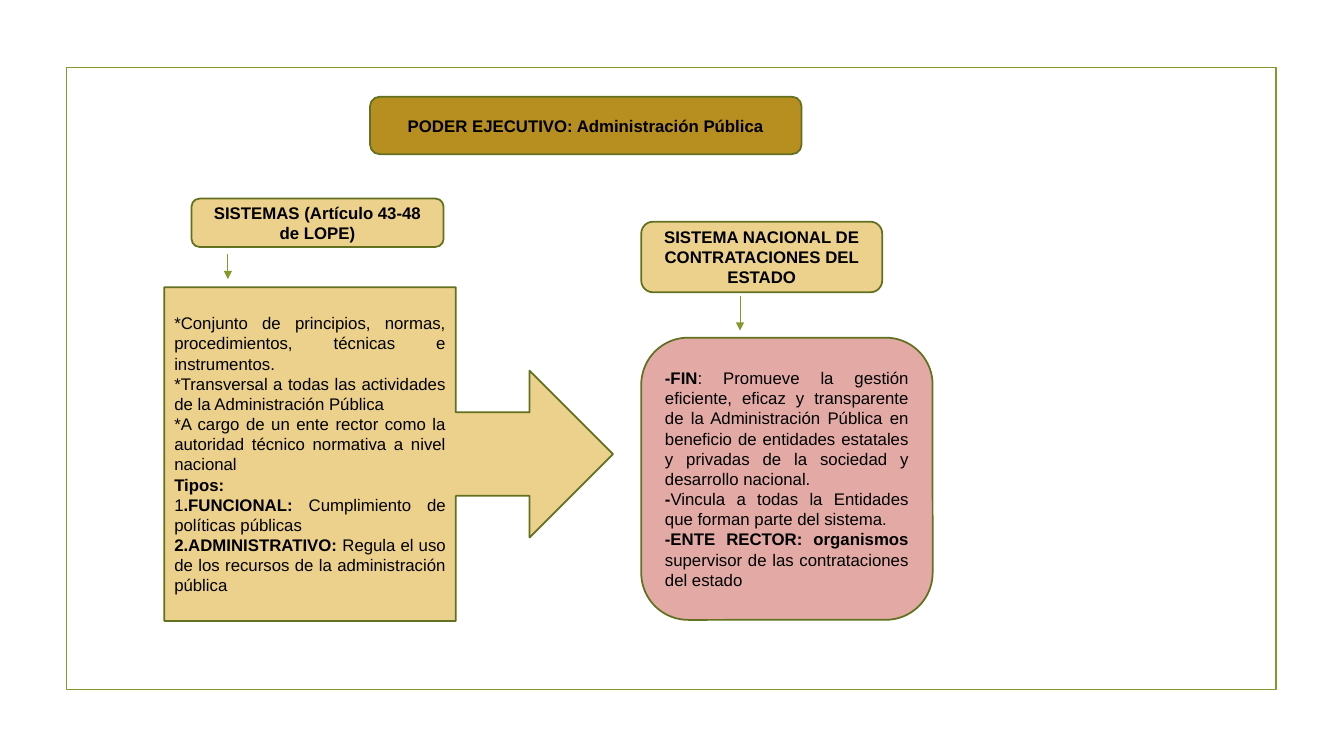
"""Build the slide on the executive power and its administrative systems."""
from dataclasses import dataclass
from typing import Optional

from lxml import etree
from pptx import Presentation
from pptx.dml.color import RGBColor
from pptx.enum.shapes import MSO_CONNECTOR, MSO_SHAPE
from pptx.enum.text import MSO_ANCHOR, PP_ALIGN
from pptx.oxml.ns import qn
from pptx.slide import Slide
from pptx.util import Inches, Pt

RECTANGLE = MSO_SHAPE.RECTANGLE
ROUNDED = MSO_SHAPE.ROUNDED_RECTANGLE
CALLOUT = MSO_SHAPE.RIGHT_ARROW_CALLOUT
STRAIGHT = MSO_CONNECTOR.STRAIGHT
MIDDLE = MSO_ANCHOR.MIDDLE
CENTER = PP_ALIGN.CENTER
JUSTIFY = PP_ALIGN.JUSTIFY

GREEN = RGBColor(0x83, 0x99, 0x2A)
DARK_GREEN = RGBColor(0x61, 0x71, 0x1F)
GOLD = RGBColor(0xB7, 0x8E, 0x20)
SAND = RGBColor(0xEB, 0xD1, 0x8C)
PINK = RGBColor(0xE3, 0xAA, 0xA5)
BLACK = RGBColor(0, 0, 0)

BOLD_MARK = "**"
FONT_FORMAT = {"name": "Arial", "size": Pt(12)}


@dataclass
class Box:
    """A shape whose text marks bold passages with BOLD_MARK."""
    left: float
    top: float
    width: float
    height: float
    preset: MSO_SHAPE = ROUNDED
    fill: Optional[RGBColor] = SAND
    line: RGBColor = DARK_GREEN
    alignment: PP_ALIGN = CENTER
    paragraphs: tuple[str, ...] = ()


@dataclass
class DownArrow:
    """A vertical arrow."""
    x: float
    top: float
    bottom: float


BOXES = [
    Box(0.66, 0.67, 12, 6.17, RECTANGLE, None, GREEN),
    Box(3.67, 0.96, 4.28, 0.57, fill=GOLD,
        paragraphs=("**PODER EJECUTIVO: Administración Pública**",)),
    Box(1.9, 1.97, 2.5, 0.48,
        paragraphs=("**SISTEMAS (Artículo 43-48 de LOPE)**",)),
    Box(1.63, 2.85, 4.45, 3.31, CALLOUT, alignment=JUSTIFY, paragraphs=(
        "*Conjunto de principios, normas, procedimientos, técnicas e instrumentos.",
        "*Transversal a todas las actividades de la Administración Pública",
        "*A cargo de un ente rector como la autoridad técnico normativa a nivel nacional",
        "**Tipos:**",
        "1**.FUNCIONAL: **Cumplimiento de políticas públicas",
        "**2.ADMINISTRATIVO: **Regula el uso de los recursos de la administración pública",
    )),
    Box(6.36, 2.2, 2.39, 0.7,
        paragraphs=("**SISTEMA NACIONAL DE CONTRATACIONES DEL ESTADO**",)),
    Box(6.36, 3.35, 2.89, 2.8, fill=PINK, alignment=JUSTIFY, paragraphs=(
        "**-FIN**: Promueve la gestión eficiente, eficaz y transparente de la "
        "Administración Pública en beneficio de entidades estatales y privadas "
        "de la sociedad y desarrollo nacional.",
        "**-**Vincula a todas la Entidades que forman parte del sistema.",
        "**-ENTE RECTOR: organismos** supervisor de las contrataciones del estado",
    )),
]
ARROWS = [DownArrow(2.26, 2.52, 2.77), DownArrow(7.34, 2.94, 3.28)]


def draw_box(slide: Slide, box: Box) -> None:
    """Draw one box with its text."""
    shape = slide.shapes.add_shape(box.preset, Inches(box.left), Inches(box.top),
                                   Inches(box.width), Inches(box.height))
    shape.shadow.inherit = False
    if box.fill is None:
        shape.fill.background()
    else:
        shape.fill.solid()
        shape.fill.fore_color.rgb = box.fill
    shape.line.color.rgb = box.line
    shape.line.width = Pt(1.25)
    frame = shape.text_frame
    frame.word_wrap = True
    frame.vertical_anchor = MIDDLE
    for index, text in enumerate(box.paragraphs):
        paragraph = frame.add_paragraph() if index else frame.paragraphs[0]
        paragraph.alignment = box.alignment
        for position, part in enumerate(text.split(BOLD_MARK)):
            if not part:
                continue
            run = paragraph.add_run()
            run.text = part
            run.font.color.rgb = BLACK
            run.font.bold = position % 2 == 1
            for name, value in FONT_FORMAT.items():
                setattr(run.font, name, value)


def draw_arrow(slide: Slide, arrow: DownArrow) -> None:
    """Draw one downward arrow."""
    connector = slide.shapes.add_connector(STRAIGHT, Inches(arrow.x), Inches(arrow.top),
                                           Inches(arrow.x), Inches(arrow.bottom))
    connector.line.color.rgb = GREEN
    connector.line.width = Pt(0.75)
    etree.SubElement(connector.line._get_or_add_ln(), qn("a:tailEnd"), type="triangle")
    etree.SubElement(connector._element.spPr, qn("a:effectLst"))


def main() -> None:
    """Create and save the presentation."""
    presentation = Presentation()
    presentation.slide_width = Inches(13.33)
    presentation.slide_height = Inches(7.5)
    slide = presentation.slides.add_slide(presentation.slide_layouts[6])
    for box in BOXES:
        draw_box(slide, box)
    for arrow in ARROWS:
        draw_arrow(slide, arrow)
    presentation.save("out.pptx")


if __name__ == "__main__":
    main()
